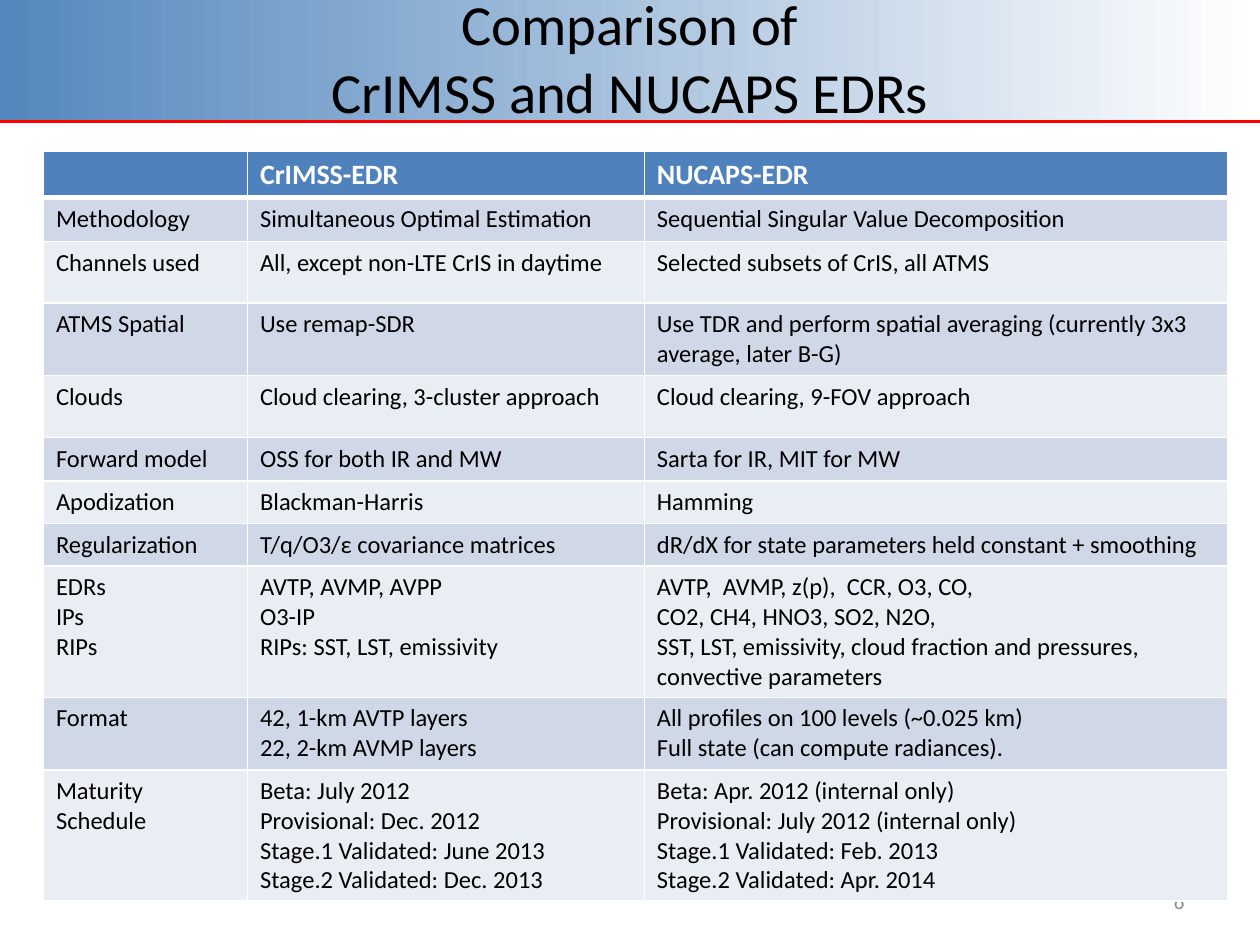
from typing import NamedTuple

from lxml import etree
from pptx import Presentation
from pptx.dml.color import RGBColor
from pptx.enum.shapes import MSO_CONNECTOR, MSO_SHAPE
from pptx.enum.text import MSO_ANCHOR, MSO_AUTO_SIZE, PP_ALIGN
from pptx.oxml.ns import qn
from pptx.util import Pt

LEFT, CENTER, RIGHT = PP_ALIGN.LEFT, PP_ALIGN.CENTER, PP_ALIGN.RIGHT
MIDDLE = MSO_ANCHOR.MIDDLE
NO_AUTOFIT = MSO_AUTO_SIZE.NONE
RECTANGLE = MSO_SHAPE.RECTANGLE
STRAIGHT = MSO_CONNECTOR.STRAIGHT

SLIDE_WIDTH, SLIDE_HEIGHT = 720, 540
BAND_BOTTOM = 69.5
TITLE_ONLY = 5
FONT = "Calibri"
HEADER_FILL = "4F81BD"
BAND_FILLS = ("D0D8E8", "E9EDF4")
COLUMN_WIDTHS = (116.6, 226.8, 333.4)
EDGE, HEADER_EDGE = 1, 3


class TextStyle(NamedTuple):
    size: float
    color: str
    bold: bool = False
    align: PP_ALIGN = LEFT


class ComparisonRow(NamedTuple):
    height: float
    topic: str
    crimss: str
    nucaps: str


TITLE_STYLE = TextStyle(32.4, "000000", align=CENTER)
NUMBER_STYLE = TextStyle(12, "8C8C8C", align=RIGHT)
HEADER_STYLE = TextStyle(16, "FFFFFF", bold=True)
BODY_STYLE = TextStyle(14, "000000")

ROWS = [
    ComparisonRow(26, "", "CrIMSS-EDR", "NUCAPS-EDR"),
    ComparisonRow(25, "Methodology", "Simultaneous Optimal Estimation",
                  "Sequential Singular Value Decomposition"),
    ComparisonRow(35.3, "Channels used", "All, except non-LTE CrIS in daytime",
                  "Selected subsets of CrIS, all ATMS"),
    ComparisonRow(41.4, "ATMS Spatial", "Use remap-SDR",
                  "Use TDR and perform spatial averaging "
                  "(currently 3x3 average, later B-G)"),
    ComparisonRow(35.3, "Clouds", "Cloud clearing, 3-cluster approach",
                  "Cloud clearing, 9-FOV approach"),
    ComparisonRow(25, "Forward model", "OSS for both IR and MW",
                  "Sarta for IR, MIT for MW"),
    ComparisonRow(24.3, "Apodization", "Blackman-Harris", "Hamming"),
    ComparisonRow(24.3, "Regularization", "T/q/O3/ε covariance matrices",
                  "dR/dX for state parameters held constant + smoothing"),
    ComparisonRow(75, "EDRs\nIPs\nRIPs",
                  "AVTP, AVMP, AVPP\nO3-IP\nRIPs: SST, LST, emissivity",
                  "AVTP,  AVMP, z(p),  CCR, O3, CO,\n"
                  "CO2, CH4, HNO3, SO2, N2O,\n"
                  "SST, LST, emissivity, cloud fraction and pressures, "
                  "convective parameters"),
    ComparisonRow(41.4, "Format", "42, 1-km AVTP layers\n22, 2-km AVMP layers",
                  "All profiles on 100 levels (~0.025 km)\n"
                  "Full state (can compute radiances)."),
    ComparisonRow(75, "Maturity Schedule",
                  "Beta: July 2012\nProvisional: Dec. 2012\n"
                  "Stage.1 Validated: June 2013\nStage.2 Validated: Dec. 2013",
                  "Beta: Apr. 2012 (internal only)\n"
                  "Provisional: July 2012 (internal only)\n"
                  "Stage.1 Validated: Feb. 2013\nStage.2 Validated: Apr. 2014"),
]


def rgb(color: str) -> RGBColor:
    return RGBColor.from_string(color)


def write_text(frame, text: str, style: TextStyle) -> None:
    frame.text = text
    for paragraph in frame.paragraphs:
        paragraph.alignment = style.align
        if not paragraph.runs:
            # An empty line takes its height from the end-of-paragraph size.
            end = etree.SubElement(paragraph._p, qn("a:endParaRPr"))
            end.set("sz", str(int(style.size * 100)))
        for run in paragraph.runs:
            values = {"name": FONT, "size": Pt(style.size), "bold": style.bold}
            for attribute, value in values.items():
                setattr(run.font, attribute, value)
            run.font.color.rgb = rgb(style.color)


def set_borders(cell, widths: dict[str, float]) -> None:
    """Draw white cell edges; the line elements must precede the fill."""
    properties = cell._tc.get_or_add_tcPr()
    for position, (side, width) in enumerate(widths.items()):
        line = etree.Element(qn(f"a:ln{side}"), w=str(int(Pt(width))))
        fill = etree.SubElement(line, qn("a:solidFill"))
        etree.SubElement(fill, qn("a:srgbClr"), val="FFFFFF")
        properties.insert(position, line)


def add_header_band(slide) -> None:
    band = slide.shapes.add_shape(RECTANGLE, 0, Pt(-0.5), Pt(SLIDE_WIDTH), Pt(70))
    band.shadow.inherit = False
    band.line.fill.background()
    band.fill.gradient()
    band.fill.gradient_angle = 0
    for stop, color in zip(band.fill.gradient_stops, ("5487BD", "FFFFFF")):
        stop.color.rgb = rgb(color)

    rule = slide.shapes.add_connector(
        STRAIGHT, 0, Pt(BAND_BOTTOM), Pt(SLIDE_WIDTH), Pt(BAND_BOTTOM))
    rule.line.color.rgb = rgb("FF0000")
    rule.line.width = Pt(1.25)
    etree.SubElement(rule._element.spPr, qn("a:effectLst"))


def place_title(slide) -> None:
    title = slide.shapes.title
    box = {"left": 36, "top": 0, "width": 648, "height": 65}
    for attribute, value in box.items():
        setattr(title, attribute, Pt(value))
    frame = title.text_frame
    frame.auto_size = NO_AUTOFIT
    frame.vertical_anchor = MIDDLE
    write_text(frame, "Comparison of\vCrIMSS and NUCAPS EDRs", TITLE_STYLE)
    slide.shapes._spTree.append(title._element)  # in front of the band


def add_page_number(slide) -> None:
    number = slide.shapes.add_textbox(Pt(516), Pt(500.5), Pt(168), Pt(28.8))
    frame = number.text_frame
    frame.word_wrap = True
    frame.vertical_anchor = MIDDLE
    write_text(frame, "6", NUMBER_STYLE)


def add_comparison_table(slide, rows: list[ComparisonRow]) -> None:
    table = slide.shapes.add_table(
        len(rows), len(COLUMN_WIDTHS), Pt(24.8), Pt(86.6),
        Pt(sum(COLUMN_WIDTHS)), Pt(sum(row.height for row in rows))).table
    for column, width in zip(table.columns, COLUMN_WIDTHS):
        column.width = Pt(width)
    for index, row in enumerate(rows):
        table.rows[index].height = Pt(row.height)
        is_header = index == 0
        fill = HEADER_FILL if is_header else BAND_FILLS[(index - 1) % 2]
        style = HEADER_STYLE if is_header else BODY_STYLE
        edges = {"L": EDGE, "R": EDGE,
                 "T": HEADER_EDGE if index == 1 else EDGE,
                 "B": HEADER_EDGE if is_header else EDGE}
        for cell, text in zip(table.rows[index].cells, row[1:]):
            write_text(cell.text_frame, text, style)
            cell.fill.solid()
            cell.fill.fore_color.rgb = rgb(fill)
            set_borders(cell, edges)


def main() -> None:
    presentation = Presentation()
    presentation.slide_width = Pt(SLIDE_WIDTH)
    presentation.slide_height = Pt(SLIDE_HEIGHT)
    slide = presentation.slides.add_slide(presentation.slide_layouts[TITLE_ONLY])
    add_header_band(slide)
    place_title(slide)
    add_page_number(slide)
    add_comparison_table(slide, ROWS)
    presentation.save("out.pptx")


if __name__ == "__main__":
    main()
